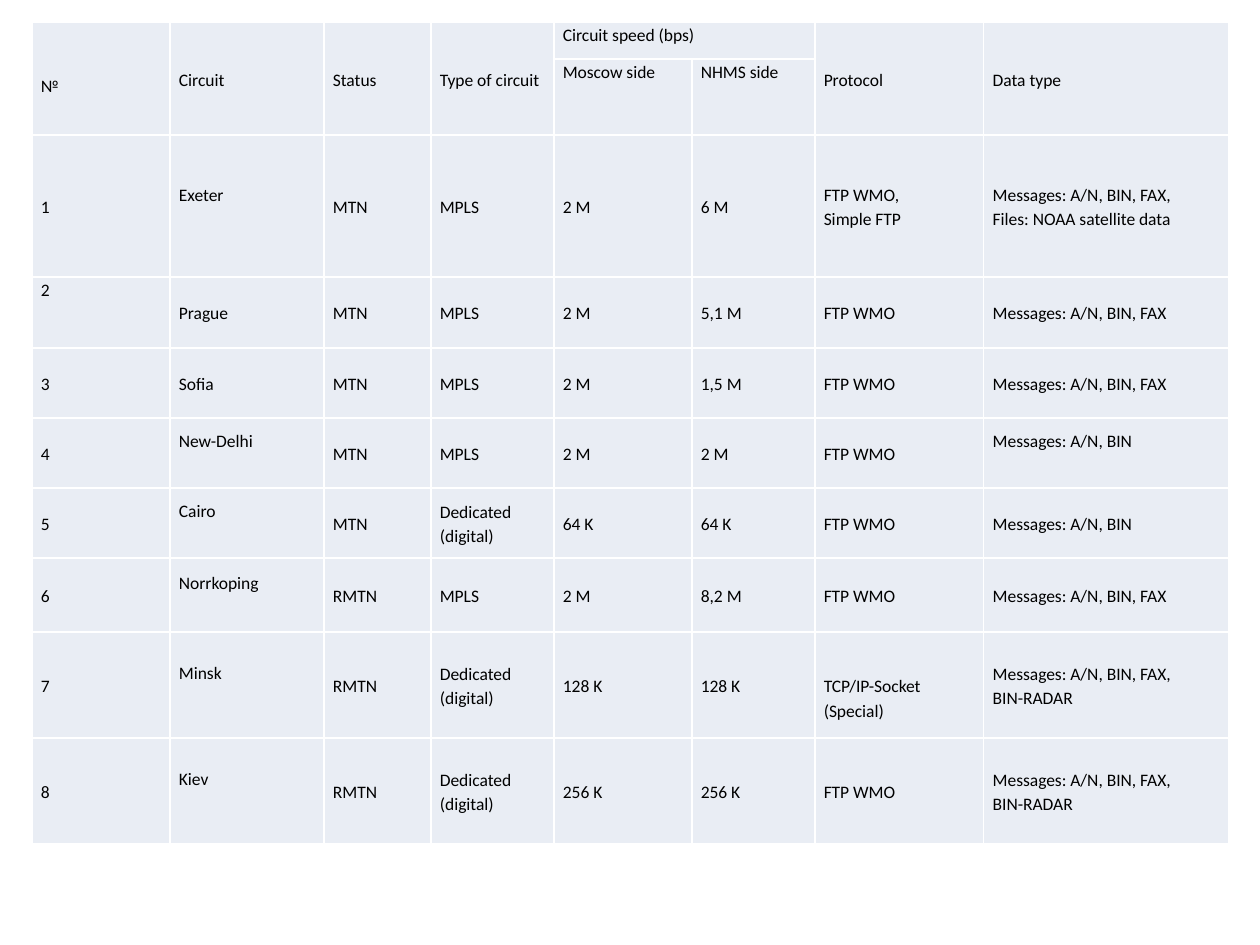
"""Build a slide with the table of telecommunication circuits."""
from dataclasses import dataclass
from typing import Any

from lxml import etree
from pptx import Presentation
from pptx import util as u
from pptx.dml.color import RGBColor
from pptx.enum import text as t
from pptx.oxml import ns

SCALE = u.Inches(1) / 126
COLORS = {"fill": "E9EDF4", "border": "FFFFFF", "text": "000000"}
LEFT, TOP, SIDE_MARGIN, LINE = 32, 22, 9, 25
COLUMN_WIDTHS = [138, 154, 107, 123, 138, 123, 169, 245]
ROW_HEIGHTS = [37, 76, 142, 71, 70, 70, 70, 74, 106, 106]
MIDDLE, UPPER = t.MSO_ANCHOR.MIDDLE, t.MSO_ANCHOR.TOP
PARAGRAPH_FORMAT = {"alignment": t.PP_ALIGN.JUSTIFY, "line_spacing": 1.15}
FONT_FORMAT = {"name": "Calibri", "size": u.Pt(10), "bold": False}


@dataclass(frozen=True)
class Entry:
    """Text of one cell, its anchor, and the room above and below in px."""
    text: str
    anchor: Any = MIDDLE
    above: int = 0
    below: int = 0
    before: int = 0
    after: int = 0


@dataclass(frozen=True)
class Circuit:
    """One row of the table body."""
    number: str | Entry
    city: str | Entry
    status: str
    kind: str
    moscow: str
    nhms: str
    protocol: str | Entry
    data: str | Entry

    def entries(self) -> list:
        return [self.number, self.city, self.status, self.kind,
                self.moscow, self.nhms, self.protocol, self.data]


def raised(text: str) -> Entry:
    return Entry(text, below=LINE)


FTP, MPLS, DEDICATED = "FTP WMO", "MPLS", "Dedicated (digital)"
MESSAGES = "Messages: A/N, BIN"
FAX = MESSAGES + ", FAX"
RADAR = FAX + ",\nBIN-RADAR"

HEADER = {
    (0, 0): Entry("№", UPPER, above=2 * LINE + 1),
    (0, 1): Entry("Circuit"),
    (0, 2): Entry("Status"),
    (0, 3): Entry("Type of circuit"),
    (0, 4): Entry("Circuit speed (bps)", UPPER),
    (0, 6): Entry("Protocol"),
    (0, 7): Entry("Data type"),
    (1, 4): Entry("Moscow side", UPPER),
    (1, 5): Entry("NHMS side", UPPER),
}
CIRCUITS = [
    Circuit("1", raised("Exeter"), "MTN", MPLS, "2 M", "6 M",
            "FTP WMO,\nSimple FTP", FAX + ",\nFiles: NOAA satellite data"),
    Circuit(Entry("2", UPPER, before=12, after=3), "Prague", "MTN", MPLS,
            "2 M", "5,1 M", FTP, FAX),
    Circuit("3", "Sofia", "MTN", MPLS, "2 M", "1,5 M", FTP, FAX),
    Circuit("4", raised("New-Delhi"), "MTN", MPLS, "2 M", "2 M", FTP,
            raised(MESSAGES)),
    Circuit("5", raised("Cairo"), "MTN", DEDICATED, "64 K", "64 K", FTP, MESSAGES),
    Circuit("6", raised("Norrkoping"), "RMTN", MPLS, "2 M", "8,2 M", FTP, FAX),
    Circuit("7", raised("Minsk"), "RMTN", DEDICATED, "128 K", "128 K",
            Entry("TCP/IP-Socket (Special)", above=LINE), RADAR),
    Circuit("8", raised("Kiev"), "RMTN", DEDICATED, "256 K", "256 K", FTP, RADAR),
]


def px(length: int) -> u.Emu:
    return u.Emu(round(length * SCALE))


def apply(target: Any, values: dict[str, Any]) -> None:
    for name, value in values.items():
        setattr(target, name, value)


def paint_cell(cell: Any) -> None:
    properties = cell._tc.get_or_add_tcPr()
    for side in ("L", "R", "T", "B"):
        line = etree.SubElement(properties, ns.qn(f"a:ln{side}"), w=str(u.Pt(1)))
        fill = etree.SubElement(line, ns.qn("a:solidFill"))
        etree.SubElement(fill, ns.qn("a:srgbClr"), val=COLORS["border"])
    cell.fill.solid()
    cell.fill.fore_color.rgb = RGBColor.from_string(COLORS["fill"])


def write_cell(cell: Any, entry: Entry) -> None:
    apply(cell, {
        "margin_left": px(SIDE_MARGIN), "margin_right": px(SIDE_MARGIN),
        "margin_top": px(entry.above), "margin_bottom": px(entry.below),
        "vertical_anchor": entry.anchor,
    })
    cell.text_frame.text = entry.text
    for paragraph in cell.text_frame.paragraphs:
        apply(paragraph, PARAGRAPH_FORMAT | {
            "space_before": u.Pt(entry.before), "space_after": u.Pt(entry.after)})
        for run in paragraph.runs:
            apply(run.font, FONT_FORMAT)
            run.font.color.rgb = RGBColor.from_string(COLORS["text"])


def add_circuit_table(slide: Any) -> None:
    table = slide.shapes.add_table(
        len(ROW_HEIGHTS), len(COLUMN_WIDTHS), px(LEFT), px(TOP),
        px(sum(COLUMN_WIDTHS)), px(sum(ROW_HEIGHTS))).table
    apply(table, {"first_row": False, "horz_banding": False})
    for column, width in zip(table.columns, COLUMN_WIDTHS):
        column.width = px(width)
    for row, height in zip(table.rows, ROW_HEIGHTS):
        row.height = px(height)
    for cell in table.iter_cells():
        paint_cell(cell)
    for column in (0, 1, 2, 3, 6, 7):
        table.cell(0, column).merge(table.cell(1, column))
    table.cell(0, 4).merge(table.cell(0, 5))
    for (row, column), entry in HEADER.items():
        write_cell(table.cell(row, column), entry)
    for row, circuit in enumerate(CIRCUITS, start=2):
        for column, item in enumerate(circuit.entries()):
            entry = item if isinstance(item, Entry) else Entry(item)
            write_cell(table.cell(row, column), entry)


def main() -> None:
    presentation = Presentation()
    apply(presentation, {"slide_width": px(1260), "slide_height": px(945)})
    slide = presentation.slides.add_slide(presentation.slide_layouts[6])
    add_circuit_table(slide)
    presentation.save("out.pptx")


if __name__ == "__main__":
    main()
